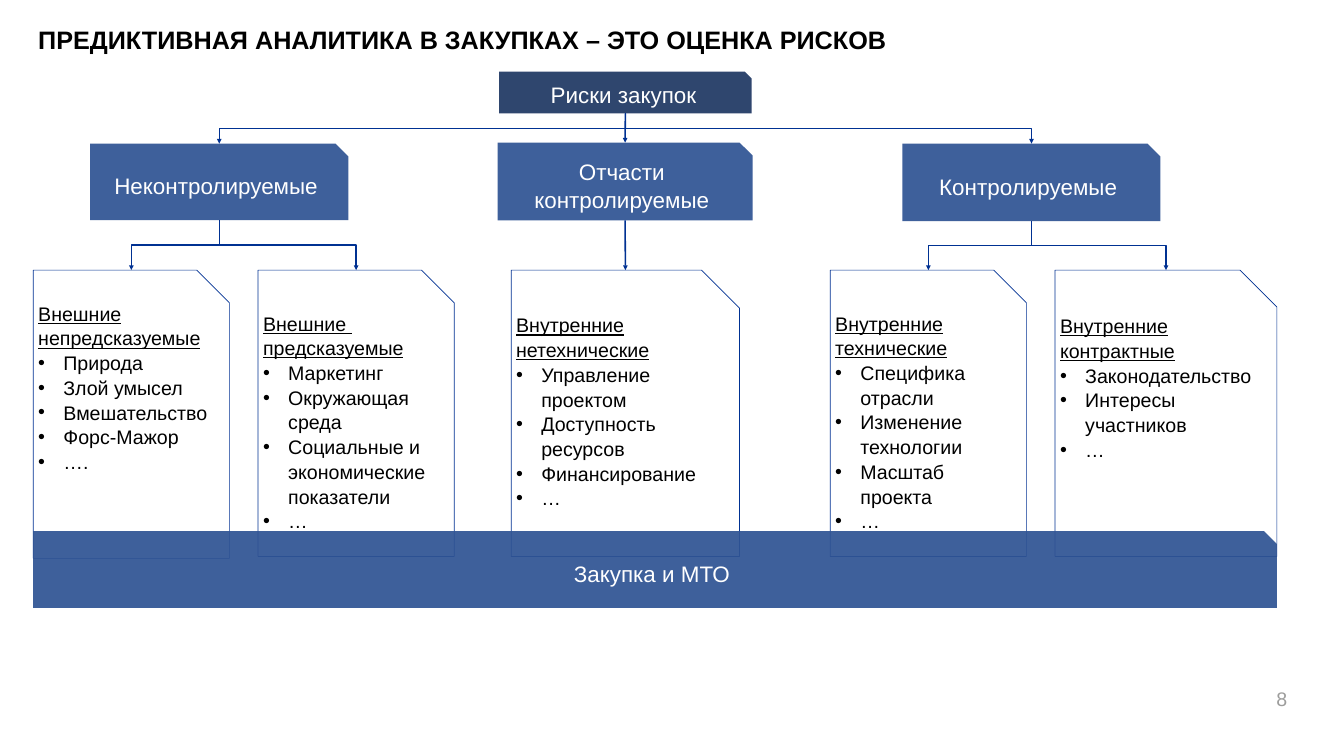
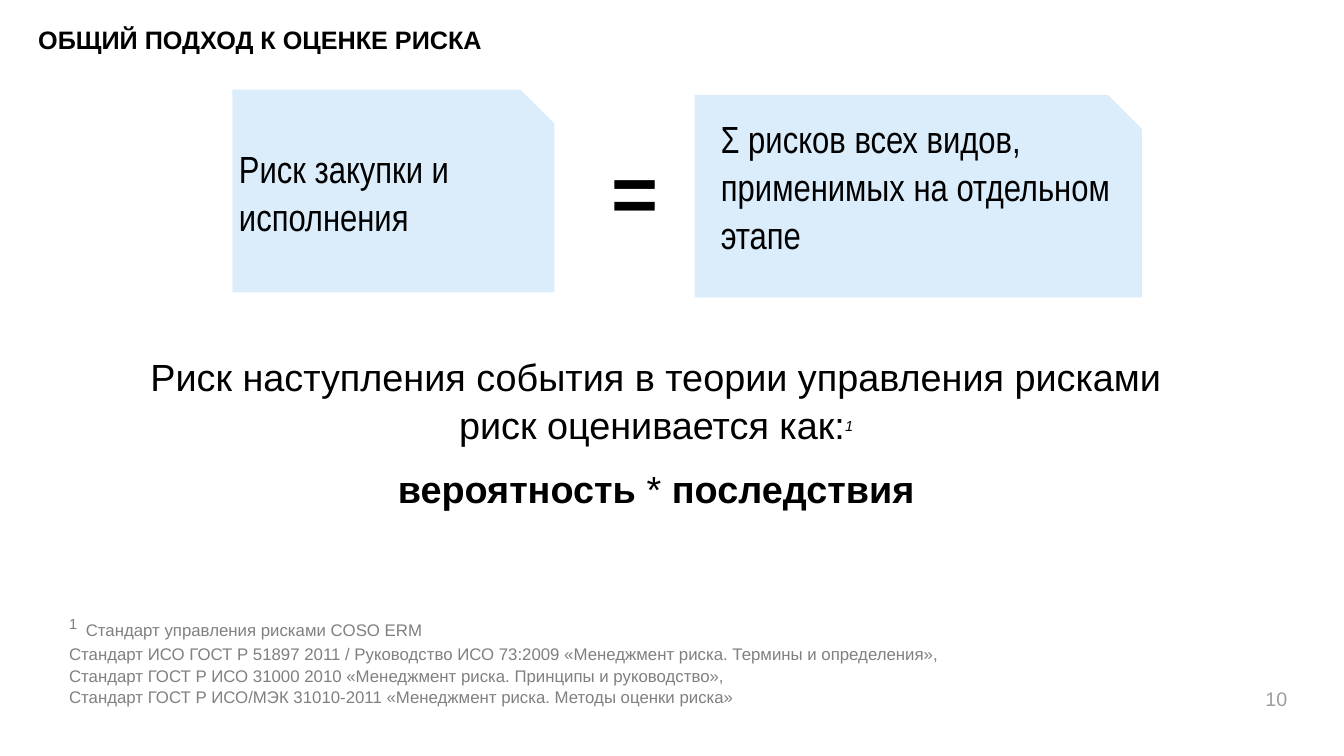
import collections

import pptx
import pptx.dml.color
import pptx.enum.shapes
import pptx.enum.text
import pptx.oxml
import pptx.oxml.ns
import pptx.util
from lxml import etree

Pt = pptx.util.Pt
ALIGN = pptx.enum.text.PP_ALIGN
ANCHOR = pptx.enum.text.MSO_ANCHOR
CONNECTOR = pptx.enum.shapes.MSO_CONNECTOR
SNIPPED = pptx.enum.shapes.MSO_SHAPE.SNIP_1_RECTANGLE
qn = pptx.oxml.ns.qn

Box = collections.namedtuple("Box", "left top width height")

NAVY, BLUE, PALE, LINE = "203864", "305494", "D9ECFB", "003192"
BLACK, WHITE, GRAY, PAGE_GRAY = "000000", "FFFFFF", "808080", "9D9D9C"
LINE_SPACING = 1.05
CARD_SIZE = 28
CARD_LINE = 33.8
BULLET_INDENT = 36
NOTE_INSETS = (0, 11.5, 7.2, 0)

BRANCHES = [
    ("Неконтролируемые", Box(81.4, 103, 368.6, 109.4)),
    ("Отчасти\nконтролируемые", Box(663.1, 101.6, 364.3, 110.9)),
    ("Контролируемые", Box(1241.3, 103, 368.6, 110.9)),
]

Card = collections.namedtuple("Card", "branch box heading risks spare_lines")
CARD_TOP = 283.7
CARDS = [
    Card(0, Box(0, CARD_TOP, 280.1, 411.8), "Внешние непредсказуемые",
         ["Природа", "Злой умысел", "Вмешательство", "Форс-Мажор", "…."], 3),
    Card(0, Box(321.1, CARD_TOP, 280.1, 409), "Внешние \nпредсказуемые",
         ["Маркетинг", "Окружающая среда",
          "Социальные и экономические показатели", "…"], 0),
    Card(1, Box(682.6, CARD_TOP, 326.2, 409), "Внутренние нетехнические",
         ["Управление проектом", "Доступность ресурсов",
          "Финансирование", "…"], 1),
    Card(2, Box(1138.3, CARD_TOP, 280.1, 409), "Внутренние технические",
         ["Специфика отрасли", "Изменение технологии",
          "Масштаб проекта", "…"], 0),
    Card(2, Box(1459.4, CARD_TOP, 316.8, 409), "Внутренние контрактные",
         ["Законодательство", "Интересы участников", "…"], 3),
]


def color(hex_string):
    return pptx.dml.color.RGBColor.from_string(hex_string)


def inside(outer, box):
    return Box(outer.left + box.left, outer.top + box.top, box.width, box.height)


def lengths(box):
    return [Pt(value) for value in box]


def write(frame, text, size=32, ink=BLACK, font="Arial", bold=False,
          italic=False, underline=False, baseline=0, align=ALIGN.LEFT,
          anchor=ANCHOR.TOP, insets=(7.2, 3.6, 7.2, 3.6), indent=0,
          bullet=False, space_before=0, more=False):
    """Text is a string of lines, or a list of (words, overrides) runs."""
    frame.word_wrap = True
    frame.vertical_anchor = anchor
    (frame.margin_left, frame.margin_top,
     frame.margin_right, frame.margin_bottom) = lengths(insets)
    base = dict(size=size, bold=bold, italic=italic, baseline=baseline)
    lines = [[(line, {})] for line in text.split("\n")] if isinstance(text, str) else [text]
    for number, runs in enumerate(lines):
        fresh = number == 0 and not more
        paragraph = frame.paragraphs[0] if fresh else frame.add_paragraph()
        paragraph.alignment = align
        paragraph.line_spacing = LINE_SPACING
        if space_before:
            paragraph.space_before = Pt(space_before)
        properties = paragraph._p.get_or_add_pPr()
        if bullet:
            properties.set("marL", str(Pt(BULLET_INDENT)))
            properties.set("indent", str(-Pt(BULLET_INDENT)))
            etree.SubElement(properties, qn("a:buFont")).set("typeface", "Arial")
            etree.SubElement(properties, qn("a:buChar")).set("char", "•")
        elif indent:
            properties.set("marL", str(Pt(indent)))
        for words, overrides in runs:
            look = {**base, **overrides}
            run = paragraph.add_run()
            run.text = words
            run.font.name = font
            run.font.size = Pt(look["size"])
            run.font.bold = look["bold"]
            run.font.italic = look["italic"]
            run.font.underline = underline
            run.font.color.rgb = color(ink)
            if look["baseline"]:
                run.font._element.set("baseline", str(look["baseline"] * 1000))


def text_box(slide, box, text, **style):
    frame = slide.shapes.add_textbox(*lengths(box)).text_frame
    write(frame, text, **style)
    return frame


def snipped(slide, box, fill=None, outline=None):
    shape = slide.shapes.add_shape(SNIPPED, *lengths(box))
    shape.shadow.inherit = False
    if fill:
        shape.fill.solid()
        shape.fill.fore_color.rgb = color(fill)
        tint = shape._element.spPr.find(qn("a:solidFill"))[0]
        etree.SubElement(tint, qn("a:alpha")).set("val", "93000")
    else:
        shape.fill.background()
    if outline:
        shape.line.color.rgb = color(outline)
        shape.line.width = Pt(1)
    else:
        shape.line.fill.background()
    return shape


def label(slide, box, text, fill):
    shape = snipped(slide, box, fill)
    write(shape.text_frame, text, ink=WHITE, align=ALIGN.CENTER, anchor=ANCHOR.MIDDLE)
    return shape


def risk_card(slide, box, card):
    shape = snipped(slide, box, outline=LINE)
    style = dict(size=CARD_SIZE, anchor=ANCHOR.MIDDLE,
                 insets=(7.2, 3.6, 7.2, 3.6 + card.spare_lines * CARD_LINE))
    write(shape.text_frame, card.heading, underline=True, **style)
    write(shape.text_frame, "\n".join(card.risks), bullet=True, more=True, **style)
    return shape


def branch_arrow(slide, parent, child):
    start_x, start_y = parent.left + parent.width // 2, parent.top + parent.height
    end_x, end_y = child.left + child.width // 2, child.top
    across, down = end_x - start_x, end_y - start_y
    straight = abs(across) < Pt(2)
    arrow = slide.shapes.add_connector(
        CONNECTOR.STRAIGHT if straight else CONNECTOR.ELBOW,
        start_x, start_y, end_x, end_y)
    arrow.begin_connect(parent, 2)
    arrow.end_connect(child, 0)
    if not straight:
        arrow.left = (start_x + end_x - down) // 2
        arrow.top = (start_y + end_y - abs(across)) // 2
        arrow.width, arrow.height = down, abs(across)
        frame = arrow._element.spPr.find(qn("a:xfrm"))
        frame.set("rot", str((270 if across > 0 else 90) * 60000))
        frame.set("flipH", "1" if across > 0 else "0")
    arrow.line.color.rgb = color(LINE)
    arrow.line.width = Pt(2.25)
    properties = arrow._element.spPr
    etree.SubElement(properties.find(qn("a:ln")), qn("a:tailEnd")).set("type", "triangle")
    etree.SubElement(properties, qn("a:effectLst"))


def risk_tree(slide, box):
    root = label(slide, inside(box, Box(665.3, 0, 360.7, 59.8)), "Риски закупок", NAVY)
    branches = [label(slide, inside(box, place), name, BLUE) for name, place in BRANCHES]
    cards = [risk_card(slide, inside(box, card.box), card) for card in CARDS]
    for branch in branches:
        branch_arrow(slide, root, branch)
    for card, shape in zip(CARDS, cards):
        branch_arrow(slide, branches[card.branch], shape)
    band_height = 109.4
    band = Box(0, box.height - band_height, box.width, band_height)
    label(slide, inside(box, band), "Закупка и МТО", BLUE)


def risk_equation(slide, box):
    snipped(slide, inside(box, Box(0, 0, 460, 289.4)), PALE)
    snipped(slide, inside(box, Box(660.2, 7.2, 638.6, 289.4)), PALE)
    term = dict(size=54, font="Arial Narrow", insets=NOTE_INSETS)
    text_box(slide, inside(box, Box(9.4, 65.5, 478, 142.6)),
             "Риск закупки и исполнения", **term)
    text_box(slide, inside(box, Box(697.7, 23, 632.9, 272.9)),
             "Σ рисков всех видов, применимых на отдельном этапе", **term)
    text_box(slide, inside(box, Box(523.4, 56.9, 111.6, 150.5)), "=",
             size=115, bold=True, align=ALIGN.CENTER, insets=NOTE_INSETS)


def risk_definition(slide, box):
    style = dict(size=54, align=ALIGN.CENTER)
    frame = text_box(slide, box, [
        ("Риск наступления события в теории управления рисками риск оценивается как:", {}),
        ("1", dict(size=36, italic=True, baseline=30)),
    ], **style)
    write(frame, [
        ("вероятность", dict(bold=True)),
        (" * ", {}),
        ("последствия", dict(bold=True)),
    ], space_before=24, more=True, **style)


def standards_note(slide, box):
    style = dict(size=24, ink=GRAY, indent=28.1, insets=NOTE_INSETS)
    frame = text_box(slide, box, [
        ("1", dict(size=36, baseline=30)),
        (" ", dict(size=44)),
        ("Стандарт управления рисками COSO ERM", {}),
    ], **style)
    write(frame, "\n".join([
        "Стандарт ИСО ГОСТ Р 51897 2011 / Руководство ИСО 73:2009 "
        "«Менеджмент риска. Термины и определения»,",
        "Стандарт ГОСТ Р ИСО 31000 2010 «Менеджмент риска. Принципы и руководство»,",
        "Стандарт ГОСТ Р ИСО/МЭК 31010-2011 «Менеджмент риска. Методы оценки риска»",
    ]), more=True, **style)


def titled_slide(deck, title, page):
    slide = deck.slides.add_slide(deck.slide_layouts[6])
    text_box(slide, Box(47.5, 28.8, 1618, 51), title, size=36, bold=True)
    text_box(slide, Box(1742.4, 976.3, 103, 57.6), page,
             size=28, ink=PAGE_GRAY, align=ALIGN.RIGHT)
    return slide


def main():
    deck = pptx.Presentation()
    deck.slide_width, deck.slide_height = Pt(1919.5), Pt(1080)

    tree = titled_slide(deck, "ПРЕДИКТИВНАЯ АНАЛИТИКА В ЗАКУПКАХ – ЭТО ОЦЕНКА РИСКОВ", "8")
    risk_tree(tree, Box(47.5, 102.2, 1776.2, 766.1))

    approach = titled_slide(deck, "ОБЩИЙ ПОДХОД К ОЦЕНКЕ РИСКА", "10")
    risk_equation(approach, Box(331.9, 128.2, 1298.8, 296.6))
    risk_definition(approach, Box(184.3, 499, 1505.5, 293))
    standards_note(approach, Box(70.6, 851.8, 1432, 190.8))

    deck.save("out.pptx")


if __name__ == "__main__":
    main()
